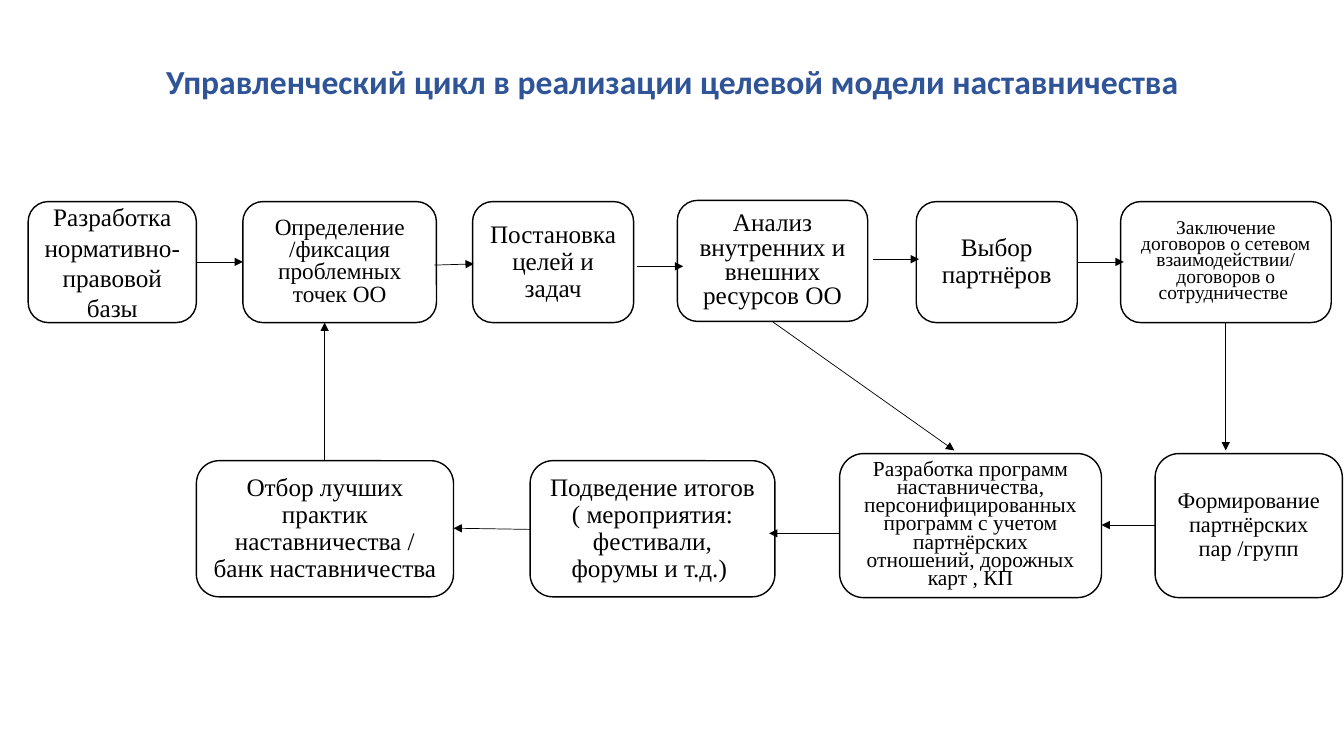
from dataclasses import dataclass

from lxml.etree import SubElement
from pptx import Presentation
from pptx.dml.color import RGBColor
from pptx.enum.shapes import MSO_CONNECTOR, MSO_SHAPE
from pptx.enum.text import MSO_ANCHOR, PP_ALIGN
from pptx.oxml.ns import qn
from pptx.util import Cm, Pt


@dataclass(frozen=True)
class Theme:
    title_font: str = "Calibri"
    body_font: str = "Times New Roman"
    title_color: RGBColor = RGBColor(0x2F, 0x54, 0x97)
    ink: RGBColor = RGBColor(0, 0, 0)
    paper: RGBColor = RGBColor(255, 255, 255)
    title_size: float = 24
    large: float = 18
    medium: float = 16.6
    regular: float = 16
    compact: float = 15.3
    small: float = 13.9
    outline: float = 1
    arrow: float = 0.5


THEME = Theme()
TITLE = "Управленческий цикл в реализации целевой модели наставничества"

STEPS = [
    (0.71, 5.08, 4.24, 3.05, THEME.large, 1, 0, ["Разработка нормативно-правовой базы"]),
    (6.12, 5.08, 4.88, 3.05, THEME.medium, 0.8, 10, ["Определение /фиксация проблемных точек ОО"]),
    (11.91, 5.08, 4.06, 3.05, THEME.large, 0.9, 10, ["Постановка целей и задач"]),
    (17.07, 5.05, 4.8, 3.05, THEME.large, 0.8, 10, ["Анализ внутренних и внешних ресурсов ОО"]),
    (23.09, 5.08, 4.06, 3.05, THEME.large, 0.9, 10, ["Выбор партнёров"]),
    (28.24, 5.08, 5.31, 3.05, THEME.small, 0.7, 0,
     ["Заключение договоров о сетевом взаимодействии/", "договоров о сотрудничестве "]),
    (29.11, 11.43, 4.72, 3.63, THEME.regular, 0.9, 10, ["Формирование партнёрских пар /групп"]),
    (21.16, 11.43, 6.6, 3.63, THEME.compact, 0.7, 10,
     ["Разработка программ наставничества, персонифицированных программ "
      "с учетом партнёрских отношений, дорожных карт , КП"]),
    (13.36, 11.61, 6.17, 3.43, THEME.large, 0.9, 10,
     ["Подведение итогов ( мероприятия: фестивали, форумы и т.д.) "]),
    (4.95, 11.61, 6.48, 3.43, THEME.large, 0.9, 10,
     ["Отбор лучших практик наставничества / банк наставничества"]),
]

ARROWS = [
    (4.95, 6.6, 6.12, 6.6),
    (10.95, 6.68, 11.94, 6.65),
    (16.05, 6.71, 17.22, 6.71),
    (22, 6.53, 23.16, 6.53),
    (27.15, 6.6, 28.32, 6.6),
    (30.89, 8.13, 30.89, 11.35),
    (19.46, 8.1, 24.05, 11.35),
    (29.11, 13.23, 27.76, 13.23),
    (21.16, 13.44, 19.38, 13.44),
    (13.36, 13.34, 11.43, 13.31),
    (8.18, 11.61, 8.18, 8.13),
]


def format_paragraph(paragraph, font_name, size, color, line_spacing, space_before=0):
    paragraph.alignment = PP_ALIGN.CENTER
    paragraph.line_spacing = line_spacing
    paragraph.space_before = Pt(space_before)
    paragraph.font.name = font_name
    paragraph.font.size = Pt(size)
    paragraph.font.color.rgb = color


def set_title(slide):
    title = slide.shapes.title
    title.left, title.top, title.width, title.height = Cm(2.34), Cm(1.02), Cm(29.21), Cm(2.16)
    title.text_frame.text = TITLE
    title.text_frame.vertical_anchor = MSO_ANCHOR.MIDDLE
    paragraph = title.text_frame.paragraphs[0]
    format_paragraph(paragraph, THEME.title_font, THEME.title_size, THEME.title_color, 0.9)
    paragraph.font.bold = True


def add_step(slide, left, top, width, height, size, line_spacing, space_before, lines):
    shape = slide.shapes.add_shape(
        MSO_SHAPE.ROUNDED_RECTANGLE, Cm(left), Cm(top), Cm(width), Cm(height))
    shape.shadow.inherit = False
    shape.fill.solid()
    shape.fill.fore_color.rgb = THEME.paper
    shape.line.color.rgb = THEME.ink
    shape.line.width = Pt(THEME.outline)
    frame = shape.text_frame
    frame.word_wrap = True
    frame.vertical_anchor = MSO_ANCHOR.MIDDLE
    frame.text = "\n".join(lines)
    for paragraph in frame.paragraphs:
        format_paragraph(paragraph, THEME.body_font, size, THEME.ink, line_spacing, space_before)


def add_arrow(slide, start_x, start_y, end_x, end_y):
    connector = slide.shapes.add_connector(
        MSO_CONNECTOR.STRAIGHT, Cm(start_x), Cm(start_y), Cm(end_x), Cm(end_y))
    connector.line.color.rgb = THEME.ink
    connector.line.width = Pt(THEME.arrow)
    properties = connector.element.spPr
    SubElement(properties.find(qn("a:ln")), qn("a:tailEnd"), type="triangle")
    SubElement(properties, qn("a:effectLst"))


def main():
    presentation = Presentation()
    presentation.slide_width, presentation.slide_height = Cm(33.87), Cm(19.05)
    slide = presentation.slides.add_slide(presentation.slide_layouts.get_by_name("Title Only"))
    set_title(slide)
    for step in STEPS:
        add_step(slide, *step)
    for arrow in ARROWS:
        add_arrow(slide, *arrow)
    presentation.save("out.pptx")


if __name__ == "__main__":
    main()
